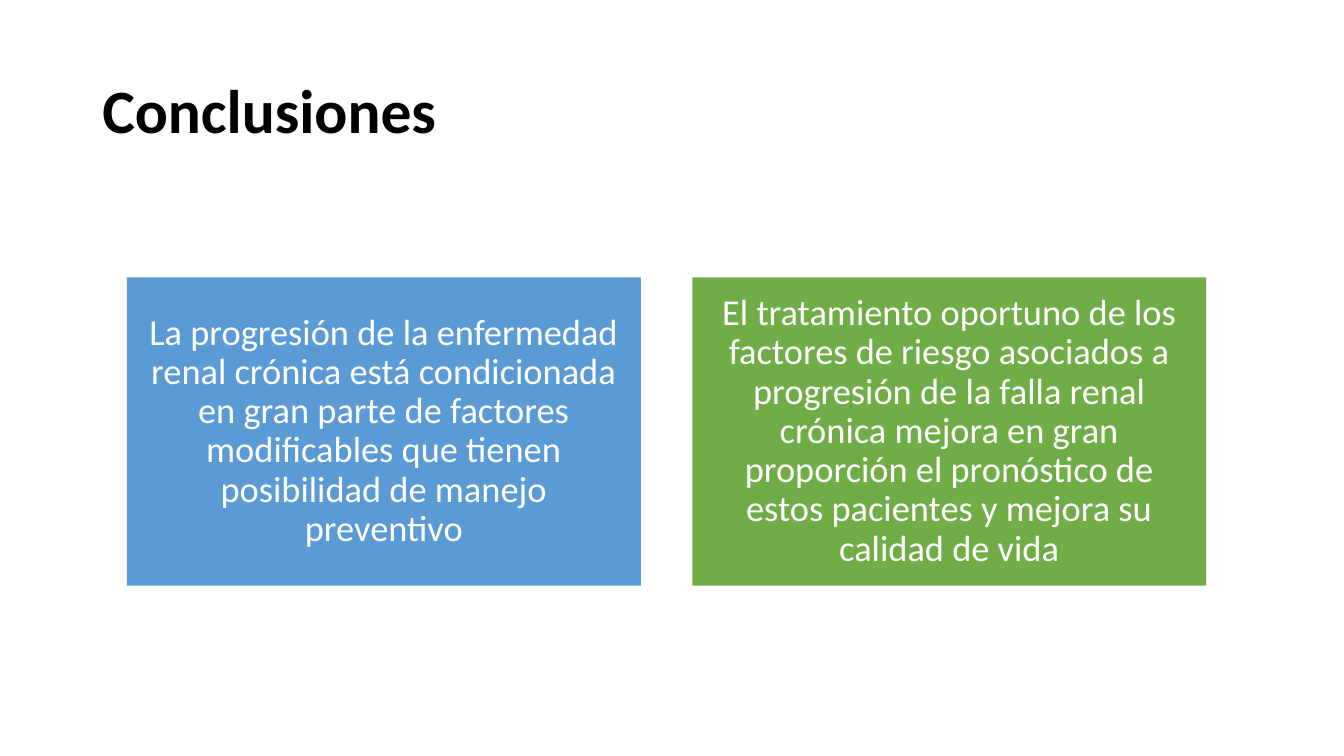
from pptx import Presentation
from pptx.dml.color import RGBColor
from pptx.enum.shapes import MSO_SHAPE
from pptx.enum.text import MSO_ANCHOR, PP_ALIGN
from pptx.util import Cm, Pt

COLORS = {"black": "000000", "white": "FFFFFF", "blue": "5B9BD5", "green": "70AD47"}


def write(frame, text, size, color, align, inset, bold=False):
    frame.word_wrap = True
    frame.vertical_anchor = MSO_ANCHOR.MIDDLE
    frame.margin_left = frame.margin_right = Cm(inset)
    frame.margin_top = frame.margin_bottom = Cm(inset)
    paragraph = frame.paragraphs[0]
    paragraph.alignment = align
    paragraph.line_spacing = 0.9
    run = paragraph.add_run()
    run.text = text
    run.font.name = "Calibri"
    run.font.size = Pt(size)
    run.font.bold = bold
    run.font.color.rgb = RGBColor.from_string(COLORS[color])


# Slide
prs = Presentation()
prs.slide_width, prs.slide_height = Cm(33.87), Cm(19.05)
slide = prs.slides.add_slide(prs.slide_layouts[6])

# Title
heading = slide.shapes.add_textbox(Cm(2.33), Cm(1.01), Cm(29.21), Cm(3.68))
write(heading.text_frame, "Conclusiones", 44, "black", PP_ALIGN.LEFT, 0.25, bold=True)

# Conclusion cards, side by side
conclusions = [
    ("blue", "La progresión de la enfermedad renal crónica está condicionada en gran "
             "parte de factores modificables que tienen posibilidad de manejo preventivo"),
    ("green", "El tratamiento oportuno de los factores de riesgo asociados a progresión "
              "de la falla renal crónica mejora en gran proporción el pronóstico de estos "
              "pacientes y mejora su calidad de vida"),
]
card_left, card_top, card_width, card_height, card_gap = 3.22, 7.02, 13.05, 7.83, 1.3
card_left, card_top, card_width, card_height, card_gap = 3.2, 6.99, 12.95, 7.77, 1.3
for index, (fill, conclusion) in enumerate(conclusions):
    left = card_left + index * (card_width + card_gap)
    card = slide.shapes.add_shape(
        MSO_SHAPE.RECTANGLE, Cm(left), Cm(card_top), Cm(card_width), Cm(card_height))
    card.shadow.inherit = False
    card.fill.solid()
    card.fill.fore_color.rgb = RGBColor.from_string(COLORS[fill])
    card.line.fill.background()
    write(card.text_frame, conclusion, 26, "white", PP_ALIGN.CENTER, 0.28)

prs.save("out.pptx")
